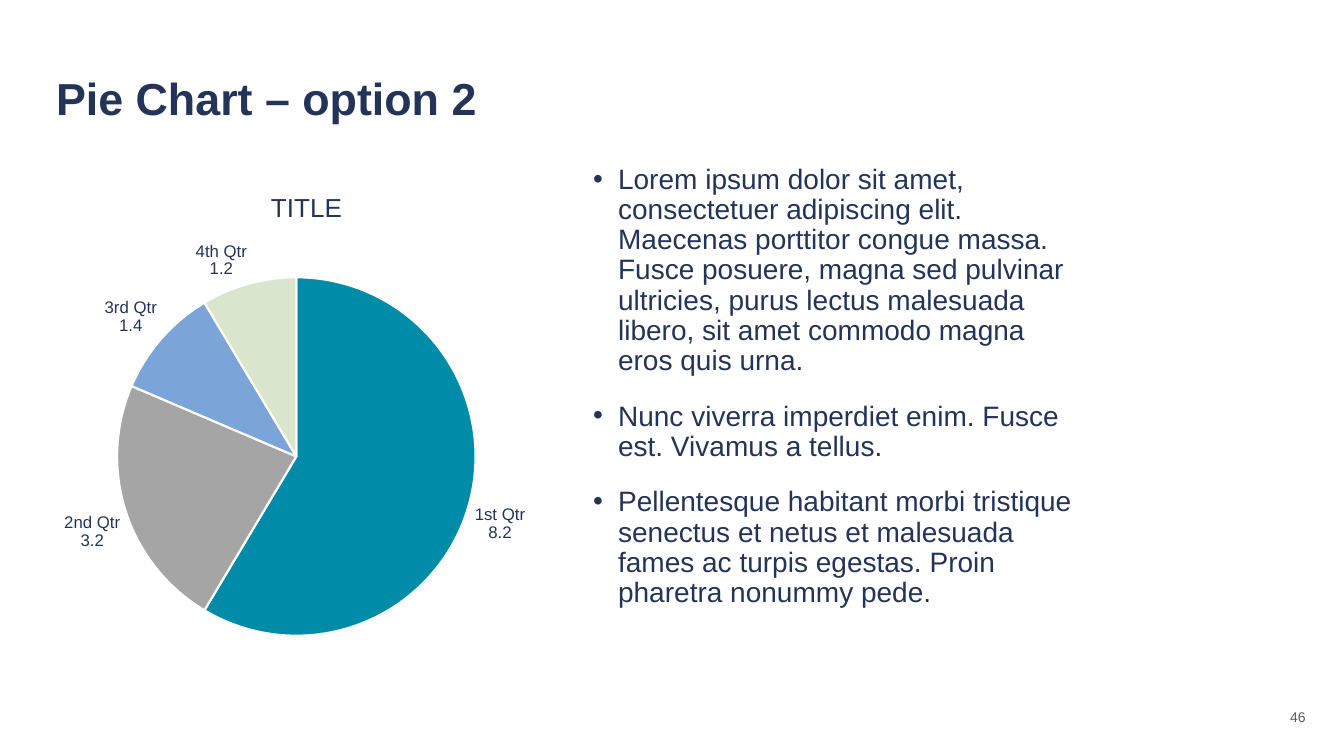
from lxml.etree import SubElement
from pptx import Presentation
from pptx.chart.data import CategoryChartData
from pptx.dml.color import RGBColor
from pptx.enum.chart import XL_CHART_TYPE, XL_LABEL_POSITION
from pptx.enum.text import MSO_ANCHOR, MSO_AUTO_SIZE, PP_ALIGN
from pptx.oxml import parse_xml
from pptx.oxml.ns import nsdecls, qn
from pptx.util import Pt

NAVY = RGBColor(0x24, 0x34, 0x59)
GREY = RGBColor(0x59, 0x59, 0x59)
WHITE = RGBColor(0xFF, 0xFF, 0xFF)
TEAL = RGBColor(0x00, 0x8B, 0xA9)
SILVER = RGBColor(0xA5, 0xA5, 0xA5)
BLUE = RGBColor(0x7B, 0xA4, 0xD9)
GREEN = RGBColor(0xDA, 0xE5, 0xCD)

SALES = [("1st Qtr", 8.2, TEAL), ("2nd Qtr", 3.2, SILVER),
         ("3rd Qtr", 1.4, BLUE), ("4th Qtr", 1.2, GREEN)]
POINTS = [
    "Lorem ipsum dolor sit amet, consectetuer adipiscing elit. Maecenas "
    "porttitor congue massa. Fusce posuere, magna sed pulvinar ultricies, "
    "purus lectus malesuada libero, sit amet commodo magna eros quis urna.",
    "Nunc viverra imperdiet enim. Fusce est. Vivamus a tellus.",
    "Pellentesque habitant morbi tristique senectus et netus et malesuada "
    "fames ac turpis egestas. Proin pharetra nonummy pede.",
]


def px(count):
    return round(count * 914400 / 100.8)


def layout(**parts):
    """Manual chart layout from c:* names and values, in order."""
    body = "".join(f'<c:{key} val="{val}"/>' for key, val in parts.items())
    return parse_xml(f'<c:layout {nsdecls("c")}><c:manualLayout>{body}'
                     '</c:manualLayout></c:layout>')


class Deck:
    face = "Arial"

    def __init__(self, wide, high):
        self.file = Presentation()
        self.file.slide_width, self.file.slide_height = px(wide), px(high)
        self.slide = self.file.slides.add_slide(self.file.slide_layouts[1])

    def style(self, font, size, color, bold=False):
        font.name, font.size, font.bold = self.face, Pt(size), bold
        font.color.rgb = color

    def place(self, shape, box, anchor):
        shape.left, shape.top, shape.width, shape.height = map(px, box)
        frame = shape.text_frame
        frame.word_wrap = True
        frame.auto_size = MSO_AUTO_SIZE.NONE
        frame.vertical_anchor = anchor
        return frame

    def line(self, para, text, size, color, align, bold=False):
        para.text = text
        para.alignment = align
        for run in para.runs:
            self.style(run.font, size, color, bold)

    def title(self, text, *box):
        frame = self.place(self.slide.shapes.title, box, MSO_ANCHOR.BOTTOM)
        para = frame.paragraphs[0]
        self.line(para, text, 32, NAVY, PP_ALIGN.LEFT, True)
        para.line_spacing = 0.9

    def bullets(self, items, *box):
        frame = self.place(self.slide.placeholders[1], box, MSO_ANCHOR.TOP)
        frame.text = "\n".join(items)
        for num, (para, text) in enumerate(zip(frame.paragraphs, items)):
            props = para._p.get_or_add_pPr()
            props.set("marL", str(px(25)))
            props.set("indent", str(-px(25)))
            SubElement(props, qn("a:buFont")).set("typeface", self.face)
            SubElement(props, qn("a:buChar")).set("char", "•")
            self.line(para, text, 20, NAVY, PP_ALIGN.LEFT)
            para.line_spacing = 0.9
            para.space_before = Pt(18 if num else 0)

    def label(self, text, *box):
        shape = self.slide.shapes.add_textbox(*map(px, box))
        frame = self.place(shape, box, MSO_ANCHOR.MIDDLE)
        self.line(frame.paragraphs[0], text, 10, GREY, PP_ALIGN.CENTER)

    def pie(self, name, rows, *box):
        data = CategoryChartData()
        data.categories = [row[0] for row in rows]
        data.add_series("Series 1", [row[1] for row in rows])
        chart = self.slide.shapes.add_chart(
            XL_CHART_TYPE.PIE, *map(px, box), data).chart
        self.style(chart.font, 10, NAVY)
        chart.has_legend = False

        # Chart title
        chart.has_title = True
        head = chart.chart_title
        self.line(head.text_frame.paragraphs[0], name, 18.6, NAVY,
                  PP_ALIGN.CENTER)
        spot = layout(xMode="edge", yMode="edge", x=0.43, y=0.05)
        self.arrange(head._element, spot, 1)

        # Plot area
        spot = layout(layoutTarget="inner", xMode="edge", yMode="edge",
                      x=0.139, y=0.209, w=0.7, h=0.816)
        plot = chart.plots[0]
        self.arrange(plot._element.getparent(), spot, 0)

        # Slices
        plot.vary_by_categories = True
        for num, row in enumerate(rows):
            form = plot.series[0].points[num].format
            form.fill.solid()
            form.fill.fore_color.rgb = row[2]
            form.line.color.rgb = WHITE
            form.line.width = Pt(1.5)

        # Slice labels
        tags = plot.series[0].data_labels
        self.style(tags.font, 12, NAVY)
        tags.show_value = tags.show_category_name = True
        tags.position = XL_LABEL_POSITION.OUTSIDE_END
        gap = parse_xml(f'<c:separator {nsdecls("c")}>\n</c:separator>')
        last = [tag for tag in tags._element
                if tag.tag.split("}")[1].startswith("show")
                and tag.tag != qn("c:showLeaderLines")][-1]
        last.addnext(gap)

    def arrange(self, owner, spot, index):
        old = owner.find(qn("c:layout"))
        if old is not None:
            owner.remove(old)
        owner.insert(index, spot)


def main():
    deck = Deck(1344, 756)
    deck.pie("TITLE", SALES, 46, 160, 512, 501)
    deck.bullets(POINTS, 583, 160, 512, 469)
    deck.label("46", 1274, 697, 48, 40)
    deck.title("Pie Chart – option 2", 46, 33, 1048, 97)
    deck.file.save("out.pptx")


if __name__ == "__main__":
    main()
